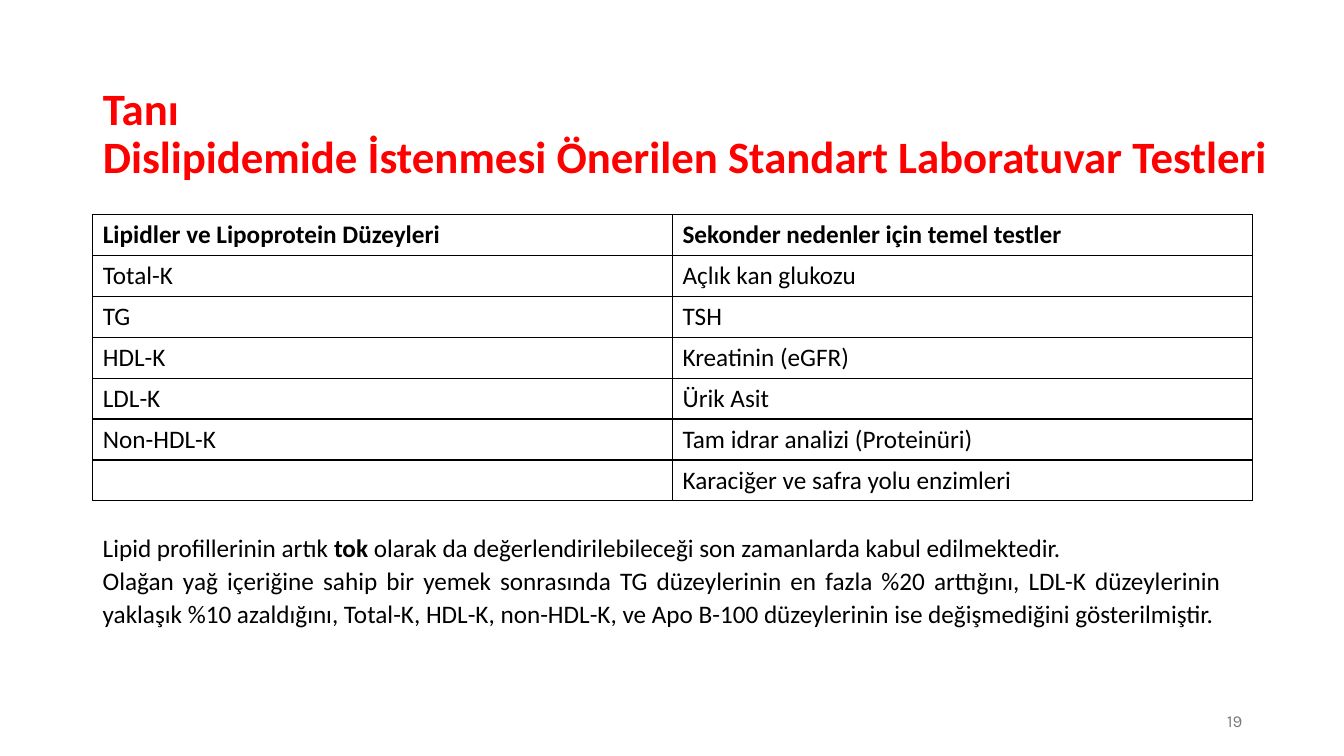
import pptx
import pptx.dml.color
import pptx.enum.text
import pptx.oxml.ns
import pptx.util
from lxml import etree

Inches = pptx.util.Inches
Pt = pptx.util.Pt
RGBColor = pptx.dml.color.RGBColor
Align = pptx.enum.text.PP_ALIGN
Anchor = pptx.enum.text.MSO_ANCHOR
AutoSize = pptx.enum.text.MSO_AUTO_SIZE
qn = pptx.oxml.ns.qn

RED = RGBColor(0xFF, 0x00, 0x00)
BLACK = RGBColor(0x00, 0x00, 0x00)
GRAY = RGBColor(0x79, 0x79, 0x79)

HEADING = "Tanı\vDislipidemide İstenmesi Önerilen Standart Laboratuvar Testleri"
TESTS = [
    ("Lipidler ve Lipoprotein Düzeyleri", "Sekonder nedenler için temel testler"),
    ("Total-K", "Açlık kan glukozu"),
    ("TG", "TSH"),
    ("HDL-K", "Kreatinin (eGFR)"),
    ("LDL-K", "Ürik Asit"),
    ("Non-HDL-K", "Tam idrar analizi (Proteinüri)"),
    ("", "Karaciğer ve safra yolu enzimleri"),
]
FINDINGS = [
    [("Lipid profillerinin artık ", False), ("tok ", True),
     ("olarak da değerlendirilebileceği son zamanlarda kabul edilmektedir.", False)],
    [("Olağan yağ içeriğine sahip bir yemek sonrasında TG düzeylerinin en fazla %20 "
      "arttığını, LDL-K düzeylerinin yaklaşık %10 azaldığını, Total-K, HDL-K, non-HDL-K, "
      "ve Apo B-100 düzeylerinin ise değişmediğini gösterilmiştir.", False)],
]


class SlideBuilder:
    font_name = "Calibri"
    body_size = 18

    def __init__(self, presentation):
        self.slide = presentation.slides.add_slide(presentation.slide_layouts[5])

    def format_run(self, run, size=body_size, color=BLACK, bold=False, name=font_name):
        run.font.name = name
        run.font.size = Pt(size)
        run.font.bold = bold
        run.font.color.rgb = color

    def title(self, text, left, top, width, height):
        heading = self.slide.shapes.title
        heading.left, heading.top = Inches(left), Inches(top)
        heading.width, heading.height = Inches(width), Inches(height)
        frame = heading.text_frame
        frame.text = text
        frame.word_wrap = True
        frame.auto_size = AutoSize.NONE
        frame.vertical_anchor = Anchor.MIDDLE
        line = frame.paragraphs[0]
        line.alignment = Align.LEFT
        line.line_spacing = 0.9
        for run in line.runs:
            self.format_run(run, 32, RED, True)

    def text(self, paragraphs, left, top, width, height, align, anchor=Anchor.TOP,
             spacing=None, **style):
        box = self.slide.shapes.add_textbox(
            Inches(left), Inches(top), Inches(width), Inches(height))
        frame = box.text_frame
        frame.word_wrap = True
        frame.vertical_anchor = anchor
        for index, pieces in enumerate(paragraphs):
            paragraph = frame.add_paragraph() if index else frame.paragraphs[0]
            paragraph.alignment = align
            paragraph.line_spacing = spacing
            for words, bold in pieces:
                run = paragraph.add_run()
                run.text = words
                self.format_run(run, bold=bold, **style)

    def border(self, cell):
        properties = cell._tc.get_or_add_tcPr()
        for side in ("a:lnL", "a:lnR", "a:lnT", "a:lnB"):
            line = etree.SubElement(properties, qn(side), w=str(Pt(1)))
            fill = etree.SubElement(line, qn("a:solidFill"))
            etree.SubElement(fill, qn("a:srgbClr"), val=str(BLACK))

    def table(self, rows, left, top, width, height):
        grid = self.slide.shapes.add_table(
            len(rows), len(rows[0]), Inches(left), Inches(top),
            Inches(width), Inches(height)).table
        grid.first_row = False
        grid.horz_banding = False
        for row_index, row in enumerate(rows):
            for column_index, words in enumerate(row):
                cell = grid.cell(row_index, column_index)
                self.border(cell)
                cell.fill.background()
                cell.vertical_anchor = Anchor.MIDDLE
                if words:
                    cell.text_frame.text = words
                    self.format_run(cell.text_frame.paragraphs[0].runs[0],
                                    bold=row_index == 0)


def main():
    presentation = pptx.Presentation()
    presentation.slide_width = Inches(13.33)
    presentation.slide_height = Inches(7.5)
    builder = SlideBuilder(presentation)
    builder.title(HEADING, 0.92, 0.83, 12.14, 1.02)
    builder.table(TESTS, 0.92, 2.13, 11.5, 2.8)
    builder.text([[("19", False)]], 9.42, 6.95, 3, 0.4, Align.RIGHT, Anchor.MIDDLE,
                 size=12, color=GRAY, name="Karla")
    builder.text(FINDINGS, 0.92, 5.2, 11.29, 1.1, Align.JUSTIFY, spacing=1.1)
    presentation.save("out.pptx")


if __name__ == "__main__":
    main()
